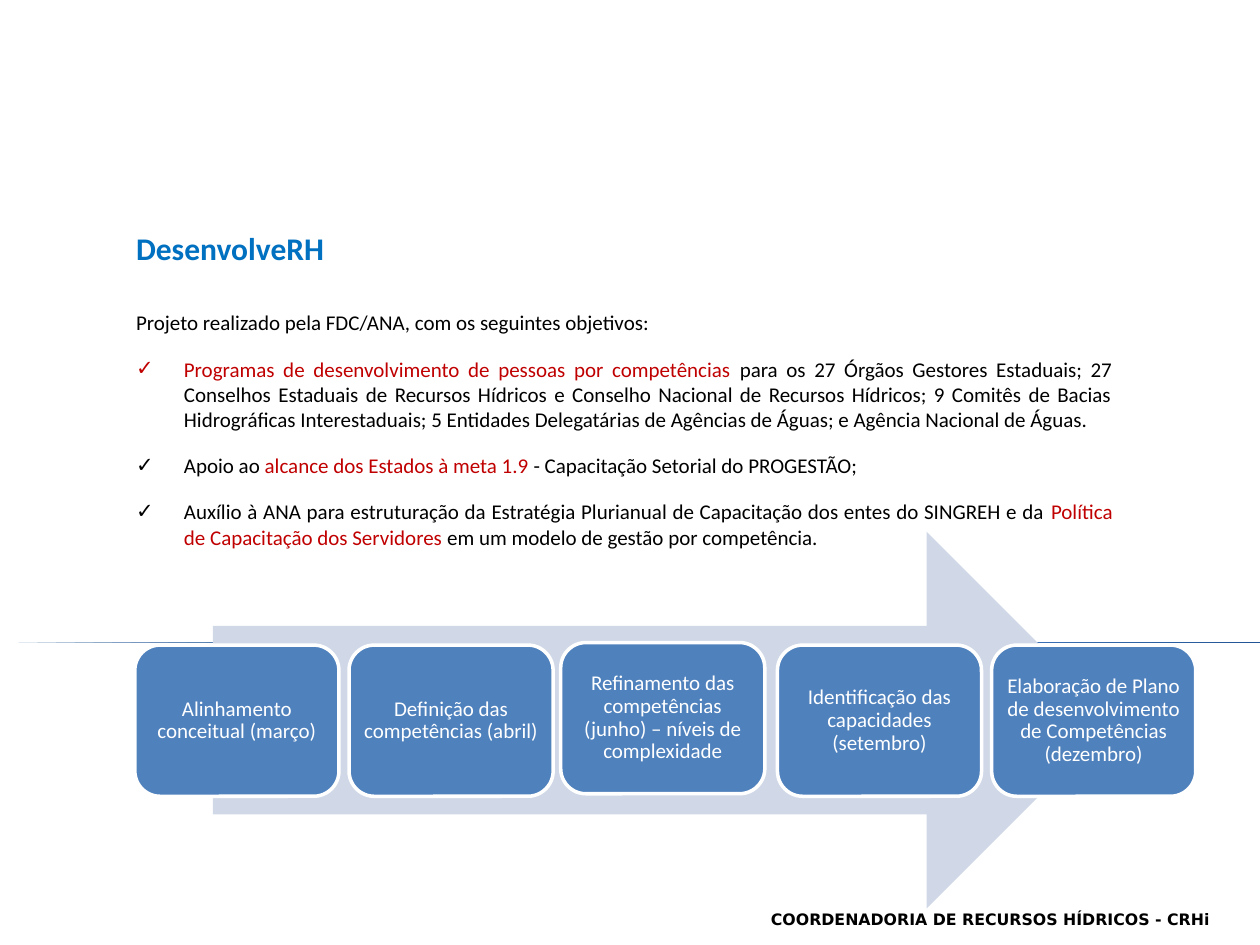
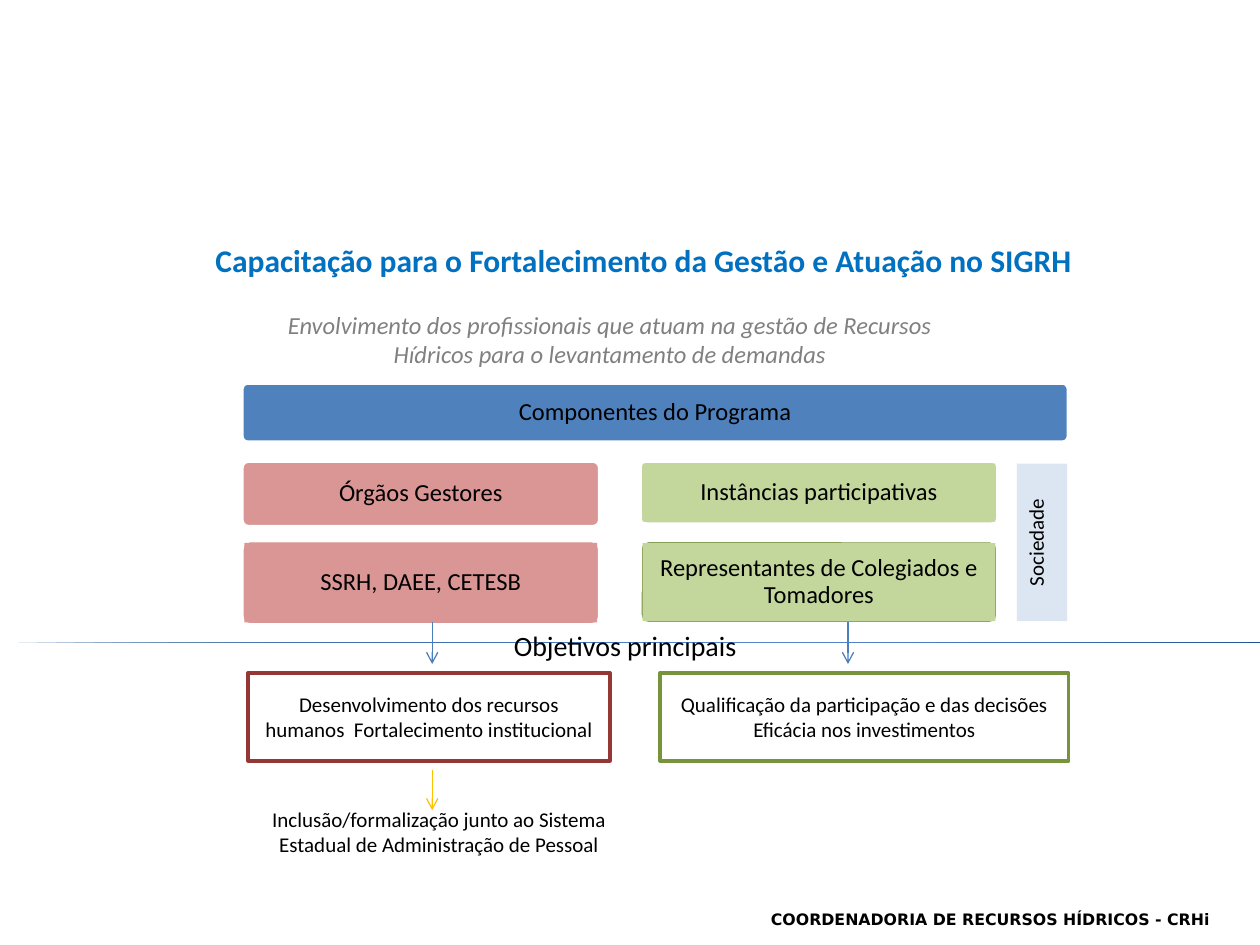
import copy

import pptx
import pptx.dml.color
import pptx.enum.shapes
import pptx.enum.text
import pptx.oxml
import pptx.oxml.ns
import pptx.util

Inches = pptx.util.Inches
Pt = pptx.util.Pt
Shape = pptx.enum.shapes.MSO_SHAPE
Align = pptx.enum.text.PP_ALIGN
Anchor = pptx.enum.text.MSO_ANCHOR
qn = pptx.oxml.ns.qn

COLORS = {
    "black": "000000", "white": "FFFFFF", "gray": "808080",
    "title": "0070C0", "accent": "C00000", "blue": "4F81BD",
    "pale_blue": "D0D8E8", "ice": "DCE6F2", "arrow": "4B7EBC",
    "gold": "FFC000", "rose": "D99694", "wine": "953735",
    "lime": "C3D69B", "olive": "77933C",
    "band_dark": "1A5090", "band_light": "5F91D9",
}


def rgb(name):
    return pptx.dml.color.RGBColor.from_string(COLORS[name])


def add_xml(parent, tag, **attributes):
    element = pptx.oxml.parse_xml(f"<a:{tag} {pptx.oxml.ns.nsdecls('a')}/>")
    for key, value in attributes.items():
        element.set(key, value)
    parent.append(element)


def write(para, text, size=12, color="black", font="Calibri", bold=False, italic=False):
    span = para.add_run()
    span.text = text
    span.font.size = Pt(size)
    span.font.name = font
    span.font.bold = bold
    span.font.italic = italic
    span.font.color.rgb = rgb(color)


class Deck:
    def __init__(self):
        self.deck = pptx.Presentation()
        self.deck.slide_width = Inches(10)
        self.deck.slide_height = Inches(7.5)
        self.page = None

    def new_page(self, layout, title, left, top, width):
        self.page = self.deck.slides.add_slide(self.deck.slide_layouts[layout])
        box = self.page.shapes.title
        self.place(box, left, top, width, 0.4)
        self.fill_text(box, title, align=Align.LEFT, size=18, color="title", bold=True)
        self.band()
        self.text("COORDENADORIA DE RECURSOS HÍDRICOS - CRHi", 6.02, 7.17, 3.98, 0.25,
                  align=Align.LEFT, size=9, font="DejaVu Sans", bold=True)

    def place(self, box, left, top, width, height):
        box.left, box.top = Inches(left), Inches(top)
        box.width, box.height = Inches(width), Inches(height)

    def fill_text(self, box, text, align=Align.CENTER, anchor=Anchor.MIDDLE,
                  inset=None, spacing=None, wrap=True, **style):
        frame = box.text_frame
        frame.word_wrap = wrap
        frame.auto_size = pptx.enum.text.MSO_AUTO_SIZE.NONE
        frame.vertical_anchor = anchor
        if inset is not None:
            frame.margin_left = frame.margin_right = Inches(inset)
            frame.margin_top = frame.margin_bottom = Inches(inset)
        para = frame.paragraphs[0]
        para.alignment = align
        if spacing:
            para.line_spacing = spacing
        write(para, text, **style)

    def text(self, text, left, top, width, height, **style):
        box = self.page.shapes.add_textbox(
            Inches(left), Inches(top), Inches(width), Inches(height))
        self.fill_text(box, text, anchor=Anchor.TOP, **style)

    def shape(self, kind, left, top, width, height, fill=None, line=None, corner=None):
        box = self.page.shapes.add_shape(
            kind, Inches(left), Inches(top), Inches(width), Inches(height))
        box.shadow.inherit = False
        if fill:
            box.fill.solid()
            box.fill.fore_color.rgb = rgb(fill)
        else:
            box.fill.background()
        if line:
            box.line.color.rgb = rgb(line)
            box.line.width = Pt(2)
        else:
            box.line.fill.background()
        if corner:
            box.adjustments[0] = corner
        return box

    def band(self):
        box = self.shape(Shape.RIGHT_TRIANGLE, 0, 5.1, 10, 0)
        box.fill.gradient()
        box.fill.gradient_angle = 310
        for stop in box.fill.gradient_stops:
            stop.color.rgb = rgb("band_dark")
        first = box._element.spPr.find(".//" + qn("a:gs"))
        first.addnext(copy.deepcopy(first))
        middle = box.fill.gradient_stops[1]
        middle.position = 0.55
        middle.color.rgb = rgb("band_light")

    def card(self, text, left, top, width, height, fill, face=None):
        box = self.shape(Shape.ROUNDED_RECTANGLE, left, top, width, height,
                         fill=fill, line="white", corner=0.1)
        if face:
            edge = 0.02
            box = self.shape(Shape.RECTANGLE, left + edge, top + edge,
                             width - 2 * edge, height - 2 * edge, fill=face)
        self.fill_text(box, text, inset=0.07, spacing=0.9, size=14)

    def goal(self, text, left, width, line):
        box = self.shape(Shape.RECTANGLE, left, 5.34, width, 0.7, line=line)
        self.fill_text(box, text)

    def arrow(self, left, top, bottom, color):
        line = self.page.shapes.add_connector(
            pptx.enum.shapes.MSO_CONNECTOR.STRAIGHT,
            Inches(left), Inches(top), Inches(left), Inches(bottom))
        line.line.color.rgb = rgb(color)
        line.line.width = Pt(0.75)
        add_xml(line.line._get_or_add_ln(), "tailEnd", type="arrow")
        add_xml(line._element.spPr, "effectLst")

    def checklist(self, intro, items, left, top, width, height):
        box = self.page.placeholders[1]
        self.place(box, left, top, width, height)
        self.fill_text(box, intro, align=Align.JUSTIFY, anchor=Anchor.TOP)
        first = box.text_frame.paragraphs[0]
        properties = first._p.get_or_add_pPr()
        properties.set("marL", "0")
        properties.set("indent", "0")
        add_xml(properties, "buNone")
        first.space_before = Pt(0)
        for item in items:
            para = box.text_frame.add_paragraph()
            para.alignment = Align.JUSTIFY
            properties = para._p.get_or_add_pPr()
            properties.set("marL", str(Inches(0.38)))
            properties.set("indent", str(-Inches(0.38)))
            add_xml(properties, "buChar", char="✓")
            para.space_before = Pt(12)
            for text, color in item:
                write(para, text, color=color)


def build_project(deck):
    deck.new_page(1, "DesenvolveRH", 0.98, 1.77, 7.95)
    deck.checklist("Projeto realizado pela FDC/ANA, com os seguintes objetivos:", [
        [("Programas de desenvolvimento de pessoas por competências ", "accent"),
         ("para os 27 Órgãos Gestores Estaduais; 27 Conselhos Estaduais de Recursos "
          "Hídricos e Conselho Nacional de Recursos Hídricos; 9 Comitês de Bacias "
          "Hidrográficas Interestaduais; 5 Entidades Delegatárias de Agências de Águas; "
          "e Agência Nacional de Águas.", "black")],
        [("Apoio ao ", "black"),
         ("alcance dos Estados à meta 1.9 ", "accent"),
         ("- Capacitação Setorial do PROGESTÃO;", "black")],
        [("Auxílio à ANA para estruturação da Estratégia Plurianual de Capacitação "
          "dos entes do SINGREH e da ", "black"),
         ("Política de Capacitação dos Servidores ", "accent"),
         ("em um modelo de gestão por competência.", "black")],
    ], 0.98, 2.41, 7.95, 2.05)
    deck.shape(Shape.RIGHT_ARROW, 1.69, 4.22, 7.16, 2.99, fill="pale_blue")
    steps = [
        "Alinhamento conceitual (março)",
        "Definição das competências (abril)",
        "Refinamento das competências (junho) – níveis de complexidade",
        "Identificação das capacidades (setembro)",
        "Elaboração de Plano de desenvolvimento de Competências (dezembro)",
    ]
    for index, step in enumerate(steps):
        nudge = 0.02 if index == 2 else 0
        box = deck.shape(Shape.ROUNDED_RECTANGLE, 1.07 + 1.7 * index - nudge, 5.12 - nudge,
                         1.62, 1.2, fill="blue", line="white")
        deck.fill_text(box, step, inset=0.05, spacing=0.9, color="white")


def build_program(deck):
    deck.new_page(5, "Capacitação para o Fortalecimento da Gestão e Atuação no SIGRH",
                  1.61, 1.86, 7.17)
    deck.text("Envolvimento dos profissionais que atuam na gestão de Recursos Hídricos "
              "para o levantamento de demandas", 1.92, 2.41, 5.84, 0.57,
              size=14, color="gray", italic=True)
    left, right, width = 1.92, 5.08, 2.84
    deck.card("Componentes do Programa", left, 3.04, 6.56, 0.47, "blue")
    deck.card("Órgãos Gestores", left, 3.66, width, 0.52, "rose")
    deck.card("Instâncias participativas", right, 3.66, width, 0.5, "lime", face="lime")
    deck.card("SSRH, DAEE, CETESB", left, 4.29, width, 0.67, "rose", face="rose")
    deck.card("Representantes de Colegiados e Tomadores", right, 4.29, width, 0.66,
              "olive", face="lime")
    society = deck.shape(Shape.RECTANGLE, 8.07, 3.68, 0.4, 1.25, fill="ice")
    deck.fill_text(society, "Sociedade", anchor=Anchor.TOP)
    society.text_frame._txBody.bodyPr.set("vert", "vert270")
    deck.text("Objetivos principais", 3.98, 4.94, 1.99, 0.37,
              align=Align.LEFT, wrap=False, size=16)
    deck.goal("Desenvolvimento dos recursos humanos  Fortalecimento institucional",
              1.97, 2.87, "wine")
    deck.goal("Qualificação da participação e das decisões Eficácia nos investimentos",
              5.24, 3.24, "olive")
    deck.text("Inclusão/formalização junto ao Sistema Estadual de Administração de Pessoal",
              1.97, 6.35, 3.03, 0.5)
    deck.arrow(3.43, 4.94, 5.27, "arrow")
    deck.arrow(6.73, 4.94, 5.27, "arrow")
    deck.arrow(3.43, 6.11, 6.43, "gold")


def main():
    deck = Deck()
    build_project(deck)
    build_program(deck)
    deck.deck.save("out.pptx")


if __name__ == "__main__":
    main()
